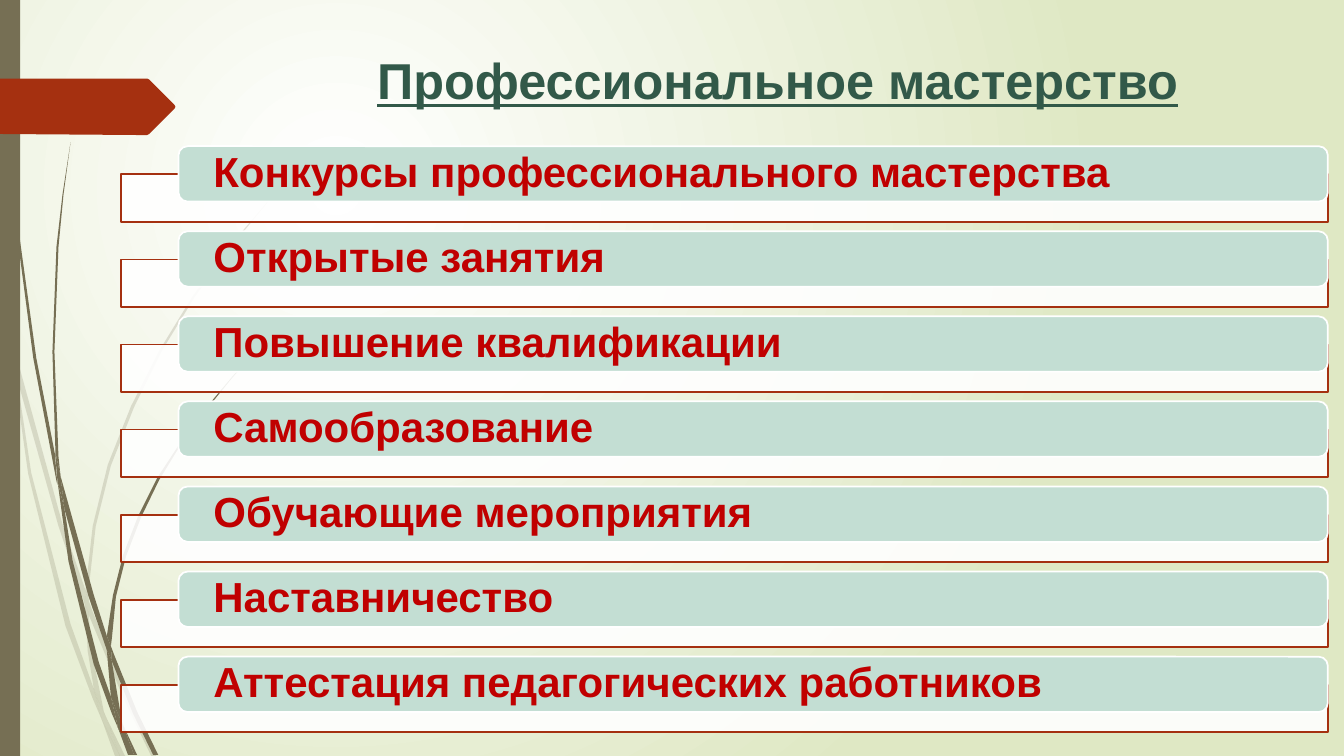
from lxml import etree
from pptx import Presentation
from pptx.dml.color import RGBColor
from pptx.enum import shapes, text
from pptx.oxml import ns
from pptx.util import Inches, Pt

FONT = "Arial"
WHITE = RGBColor(0xFF, 0xFF, 0xFF)
PALE_GREEN = RGBColor(0xDF, 0xE8, 0xC4)
OLIVE = RGBColor(0x76, 0x6F, 0x54)
RUST = RGBColor(0xA5, 0x30, 0x10)
MINT = RGBColor(0xC3, 0xDE, 0xD3)
DARK_GREEN = RGBColor(0x32, 0x59, 0x49)
RED = RGBColor(0xC0, 0x00, 0x00)

TITLE = "Профессиональное мастерство"
TOPICS = [
    "Конкурсы профессионального мастерства",
    "Открытые занятия",
    "Повышение квалификации",
    "Самообразование",
    "Обучающие мероприятия",
    "Наставничество",
    "Аттестация педагогических работников",
]
FIRST_BAR_TOP = 1.45
BAR_STEP = 0.844

# Outlines of the grass blades, in inches
PALE_BLADES = [
    [(0.11, 3.5), (0.09, 3.22), (0, 2.82), (0, 2.99), (0.1, 3.44)],
    [(0.58, 5.22), (0.84, 5.99), (0.85, 5.86), (0.62, 5.2), (0.14, 3.45), (0.17, 3.76)],
    [(0.92, 6.07), (0.88, 5.96), (0.88, 6.1), (1.23, 6.94), (1.5, 7.5), (1.55, 7.5),
     (1.27, 6.92)],
    [(1.19, 7.5), (1.24, 7.5), (1.05, 7.11)],
    [(0.93, 6.83), (0.7, 6.19), (0.31, 4.69), (0.17, 3.76), (0.11, 3.5), (0.28, 4.7),
     (0.65, 6.21), (0.92, 6.93), (1.01, 7.14), (0.99, 7.07)],
    [(0.84, 5.99), (0.87, 6.46), (0.93, 6.83), (0.96, 6.92), (1.05, 7.11), (1.03, 7.06),
     (0.91, 6.46), (0.88, 6.1), (0.88, 6.08)],
    [(0.88, 5.84), (0.95, 5.22), (1.1, 4.62), (1.33, 4.04), (1.6, 3.49), (1.93, 2.95),
     (2.29, 2.45), (2.68, 1.98), (2.9, 1.75), (3.12, 1.54), (3.12, 1.53), (2.89, 1.75),
     (2.68, 1.97), (2.28, 2.44), (1.91, 2.94), (1.58, 3.48), (1.3, 4.03), (1.07, 4.61),
     (0.92, 5.22), (0.85, 5.84), (0.85, 5.86), (0.88, 5.96)],
    [(1.01, 7.14), (1.14, 7.5), (1.19, 7.5)],
    [(0.88, 6.08), (0.88, 6.1), (0.88, 5.96), (0.85, 5.86), (0.84, 5.99)],
    [(0.96, 6.92), (0.93, 6.83), (0.99, 7.07), (1.01, 7.14), (1.19, 7.5), (1.05, 7.11)],
]
DARK_BLADES = [
    [(0.07, 1.1), (0.17, 2.33), (0.33, 3.55), (0.56, 4.77), (0.57, 4.81), (0.55, 4.57),
     (0.55, 4.53), (0.36, 3.55), (0.19, 2.32), (0.08, 1.09), (0.05, 0.48), (0.04, 0),
     (0.03, 0), (0.04, 0.48)],
    [(0.88, 5.92), (1.06, 6.45), (1.06, 6.33), (1.06, 6.31), (0.93, 5.9), (0.6, 4.72),
     (0.64, 5.05)],
    [(1.13, 6.49), (1.1, 6.41), (1.11, 6.56), (1.32, 7.08), (1.52, 7.49), (1.57, 7.49),
     (1.36, 7.06)],
    [(1.1, 6.91), (0.98, 6.57), (0.72, 5.56), (0.64, 5.05), (0.57, 4.77), (0.68, 5.57),
     (0.93, 6.59), (1.11, 7.08), (1.17, 7.22), (1.16, 7.17)],
    [(0.6, 4.72), (0.58, 4.53), (0.54, 3.49), (0.58, 2.45), (0.63, 1.93), (0.7, 1.41),
     (0.62, 1.93), (0.56, 2.45), (0.52, 3.49), (0.55, 4.49)],
    [(1.33, 7.49), (1.36, 7.49), (1.22, 7.19)],
    [(0.57, 4.77), (0.64, 5.05), (0.6, 4.72), (0.55, 4.49), (0.55, 4.53)],
    [(1.11, 6.33), (1.15, 5.92), (1.25, 5.52), (1.4, 5.13), (1.58, 4.76), (1.8, 4.4),
     (2.05, 4.06), (2.31, 3.74), (2.45, 3.59), (2.61, 3.44), (2.6, 3.44), (2.45, 3.58),
     (2.31, 3.73), (2.04, 4.05), (1.79, 4.39), (1.56, 4.74), (1.37, 5.12), (1.22, 5.51),
     (1.12, 5.91), (1.06, 6.31), (1.1, 6.41)],
    [(1.17, 7.22), (1.27, 7.49), (1.31, 7.49)],
    [(1.06, 6.45), (1.1, 6.91), (1.16, 7.06), (1.22, 7.19), (1.21, 7.16), (1.11, 6.56),
     (1.09, 6.51)],
    [(1.06, 6.45), (1.09, 6.51), (1.11, 6.56), (1.1, 6.41), (1.06, 6.31), (1.06, 6.33)],
    [(1.16, 7.06), (1.1, 6.91), (1.16, 7.17), (1.17, 7.22), (1.3, 7.49), (1.33, 7.49),
     (1.22, 7.19)],
]
ARROW = [(0, 0.78), (1.46, 0.78), (1.48, 0.79), (1.73, 1.04), (1.74, 1.06), (1.73, 1.08),
         (1.48, 1.33), (1.46, 1.34), (1.36, 1.34), (0, 1.33)]


def paint_background(page):
    """Fill the page with a circular gradient centred left of the middle."""
    fill = page.background.fill
    fill.gradient()
    for stop, color, position in zip(fill.gradient_stops, (WHITE, PALE_GREEN), (0, 1)):
        stop.color.rgb = color
        stop.position = position
    linear = page.element.find(".//" + ns.qn("a:lin"))
    circle = etree.Element(ns.qn("a:path"), path="circle")
    etree.SubElement(circle, ns.qn("a:fillToRect"), l="50000", t="50000", r="100000", b="100000")
    linear.getparent().replace(linear, circle)


def style_shape(shape, color, opacity=100, line_color=None):
    shape.shadow.inherit = False
    shape.fill.solid()
    shape.fill.fore_color.rgb = color
    if opacity < 100:
        fill_color = shape.fill._xPr.find(".//" + ns.qn("a:srgbClr"))
        etree.SubElement(fill_color, ns.qn("a:alpha"), val=str(opacity * 1000))
    if line_color is None:
        shape.line.fill.background()
    else:
        shape.line.color.rgb = line_color
        shape.line.width = Pt(1.25)


def add_outline(page, points, color, opacity=100):
    corners = [(Inches(x), Inches(y)) for x, y in points]
    builder = page.shapes.build_freeform(*corners[0])
    builder.add_line_segments(corners[1:])
    style_shape(builder.convert_to_shape(), color, opacity)


def add_box(page, kind, left, top, width, height, color, **style):
    box = page.shapes.add_shape(kind, Inches(left), Inches(top), Inches(width), Inches(height))
    style_shape(box, color, **style)
    return box


def format_text(para, size, color, underline=None):
    for span in para.runs:
        span.font.name = FONT
        span.font.size = Pt(size)
        span.font.bold = True
        span.font.underline = underline
        span.font.color.rgb = color


def set_title(page):
    title = page.shapes.title
    title.left, title.top = Inches(2.84), Inches(0.36)
    title.width, title.height = Inches(9.75), Inches(1)
    frame = title.text_frame
    frame.text = TITLE
    frame.vertical_anchor = text.MSO_ANCHOR.TOP
    frame.margin_top = Inches(0.13)
    para = frame.paragraphs[0]
    para.alignment = text.PP_ALIGN.CENTER
    format_text(para, 36, DARK_GREEN, underline=True)


def add_topic(page, topic, top):
    """Add a rounded bar with its text, over an open frame."""
    kinds = shapes.MSO_SHAPE
    add_box(page, kinds.RECTANGLE, 1.2, top + 0.28, 11.97, 0.47, WHITE,
            opacity=90, line_color=RUST)
    bar = add_box(page, kinds.ROUNDED_RECTANGLE, 1.77, top, 11.4, 0.55, MINT, line_color=WHITE)
    frame = bar.text_frame
    frame.text = topic
    frame.vertical_anchor = text.MSO_ANCHOR.MIDDLE
    frame.margin_left = frame.margin_right = Inches(0.32)
    frame.margin_top = frame.margin_bottom = 0
    para = frame.paragraphs[0]
    para.alignment = text.PP_ALIGN.LEFT
    para.line_spacing = 0.9
    format_text(para, 30, RED)


def main():
    deck = Presentation()
    deck.slide_width, deck.slide_height = Inches(13.33), Inches(7.5)
    page = deck.slides.add_slide(deck.slide_layouts.get_by_name("Title Only"))
    paint_background(page)
    for blade in PALE_BLADES:
        add_outline(page, blade, OLIVE, opacity=20)
    for blade in DARK_BLADES:
        add_outline(page, blade, OLIVE)
    add_box(page, shapes.MSO_SHAPE.RECTANGLE, 0, 0, 0.2, 7.5, OLIVE)
    add_outline(page, ARROW, RUST)
    set_title(page)
    for index, topic in enumerate(TOPICS):
        add_topic(page, topic, FIRST_BAR_TOP + index * BAR_STEP)
    deck.save("out.pptx")


if __name__ == "__main__":
    main()
